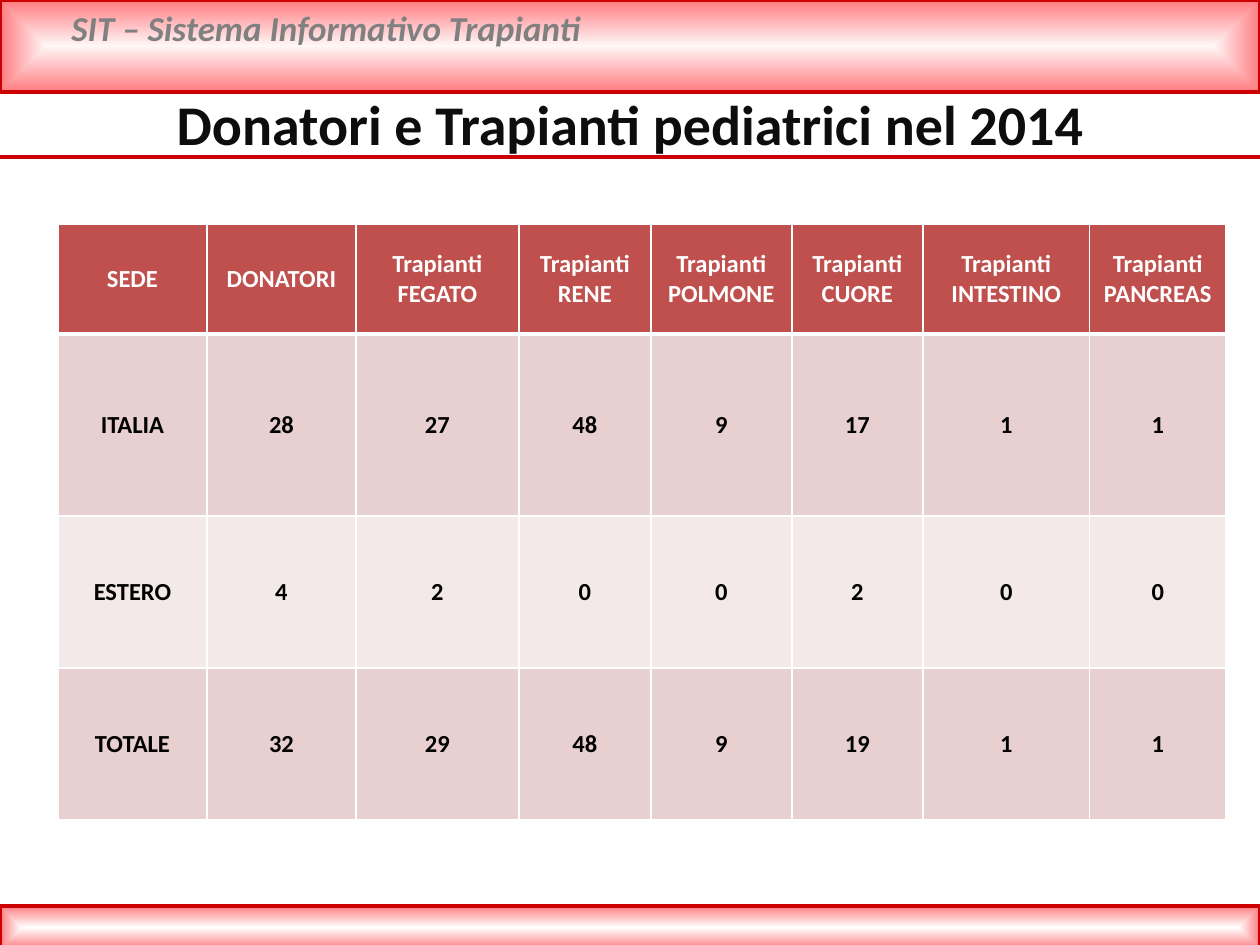
from lxml import etree
from pptx import Presentation
from pptx.dml.color import RGBColor
from pptx.enum.shapes import MSO_CONNECTOR, MSO_SHAPE
from pptx.enum.text import MSO_ANCHOR, PP_ALIGN
from pptx.oxml import parse_xml
from pptx.oxml.ns import nsdecls, qn
from pptx.util import Pt

LEFT, CENTER = PP_ALIGN.LEFT, PP_ALIGN.CENTER
MIDDLE = MSO_ANCHOR.MIDDLE
RECTANGLE, STRAIGHT = MSO_SHAPE.RECTANGLE, MSO_CONNECTOR.STRAIGHT
PX = 914400 // 126
WIDTH, HEIGHT = 1260, 945
FONT = "Calibri"
COLORS = {
    "red": "CC0000", "pink": "FF7C80", "pale": "FFF6F6", "white": "FFFFFF",
    "gray": "808080", "ink": "0D0D0D", "black": "000000",
    "header": "C0504D", "odd": "E8D0D0", "even": "F4E9E9",
}

# Content
SYSTEM_NAME = "SIT – Sistema Informativo Trapianti"
TITLE = "Donatori e Trapianti pediatrici nel 2014"
ROWS = [
    ["SEDE", "DONATORI", "Trapianti FEGATO", "Trapianti\nRENE", "Trapianti\nPOLMONE",
     "Trapianti\nCUORE", "Trapianti\nINTESTINO", "Trapianti\nPANCREAS"],
    ["ITALIA", 28, 27, 48, 9, 17, 1, 1],
    ["ESTERO", 4, 2, 0, 0, 2, 0, 0],
    ["TOTALE", 32, 29, 48, 9, 19, 1, 1],
]
TABLE_LEFT, TABLE_TOP = 58, 224
COLUMN_WIDTHS = [149, 149, 163, 132, 141, 131, 167, 136]
ROW_HEIGHTS = [110, 182, 152, 152]
# Top, height and centre colour of each band
BANDS = [(0, 92, "pale"), (906, 43, "white")]


def rgb(name):
    return RGBColor.from_string(COLORS[name])


def box(*lengths):
    return [length * PX for length in lengths]


def write(frame, text, size, color, align=LEFT, italic=False):
    frame.word_wrap = True
    for index, line in enumerate(text.split("\n")):
        paragraph = frame.add_paragraph() if index else frame.paragraphs[0]
        paragraph.alignment = align
        run = paragraph.add_run()
        run.text = line
        font = run.font
        font.name, font.size, font.color.rgb = FONT, Pt(size), rgb(color)
        font.bold, font.italic = True, italic


def add_band(slide, top, height, center):
    band = slide.shapes.add_shape(RECTANGLE, *box(0, top, WIDTH, height))
    band.shadow.inherit = False
    band.line.color.rgb, band.line.width = rgb("red"), Pt(2)
    band.fill.gradient()
    for stop, color in zip(band.fill.gradient_stops, (center, "pink")):
        stop.color.rgb = rgb(color)
    # Shade from the centre out to the edges
    linear = next(band.element.iter(qn("a:lin")))
    linear.getparent().replace(linear, parse_xml(
        f'<a:path {nsdecls("a")} path="shape">'
        '<a:fillToRect l="50000" t="50000" r="50000" b="50000"/></a:path>'))


def set_borders(cell, **widths):
    properties = cell._tc.get_or_add_tcPr()
    for index, side in enumerate("LRTB"):
        properties.insert(index, parse_xml(
            f'<a:ln{side} {nsdecls("a")} w="{Pt(widths.get(side, 1))}"><a:solidFill>'
            f'<a:srgbClr val="{COLORS["white"]}"/></a:solidFill></a:ln{side}>'))


def add_table(slide):
    table = slide.shapes.add_table(
        len(ROWS), len(COLUMN_WIDTHS),
        *box(TABLE_LEFT, TABLE_TOP, sum(COLUMN_WIDTHS), sum(ROW_HEIGHTS))).table
    for column, width in zip(table.columns, COLUMN_WIDTHS):
        column.width = width * PX
    for index, (row, height, values) in enumerate(zip(table.rows, ROW_HEIGHTS, ROWS)):
        row.height = height * PX
        fill = "header" if index == 0 else "odd" if index % 2 else "even"
        borders = {0: {"B": 3}, 1: {"T": 3}}.get(index, {})
        for cell, value in zip(row.cells, values):
            cell.vertical_anchor = MIDDLE
            cell.fill.solid()
            cell.fill.fore_color.rgb = rgb(fill)
            set_borders(cell, **borders)
            write(cell.text_frame, str(value), size=14, align=CENTER,
                  color="black" if index else "white")


def main():
    presentation = Presentation()
    presentation.slide_width, presentation.slide_height = box(WIDTH, HEIGHT)
    slide = presentation.slides.add_slide(presentation.slide_layouts[6])

    # Header and footer bands
    for band in BANDS:
        add_band(slide, *band)
    header = slide.shapes.add_textbox(*box(59, 0, 1131, 55))
    write(header.text_frame, SYSTEM_NAME, size=20, color="gray", italic=True)

    # Rule under the title
    rule = slide.shapes.add_connector(STRAIGHT, *box(0, 157, WIDTH, 157))
    rule.line.color.rgb, rule.line.width = rgb("red"), Pt(2)
    etree.SubElement(rule.element.spPr, qn("a:effectLst"))

    # Table and title
    add_table(slide)
    title = slide.shapes.add_textbox(*box(92, 83, 1077, 81))
    write(title.text_frame, TITLE, size=32, color="ink", align=CENTER)

    presentation.save("out.pptx")


if __name__ == "__main__":
    main()
